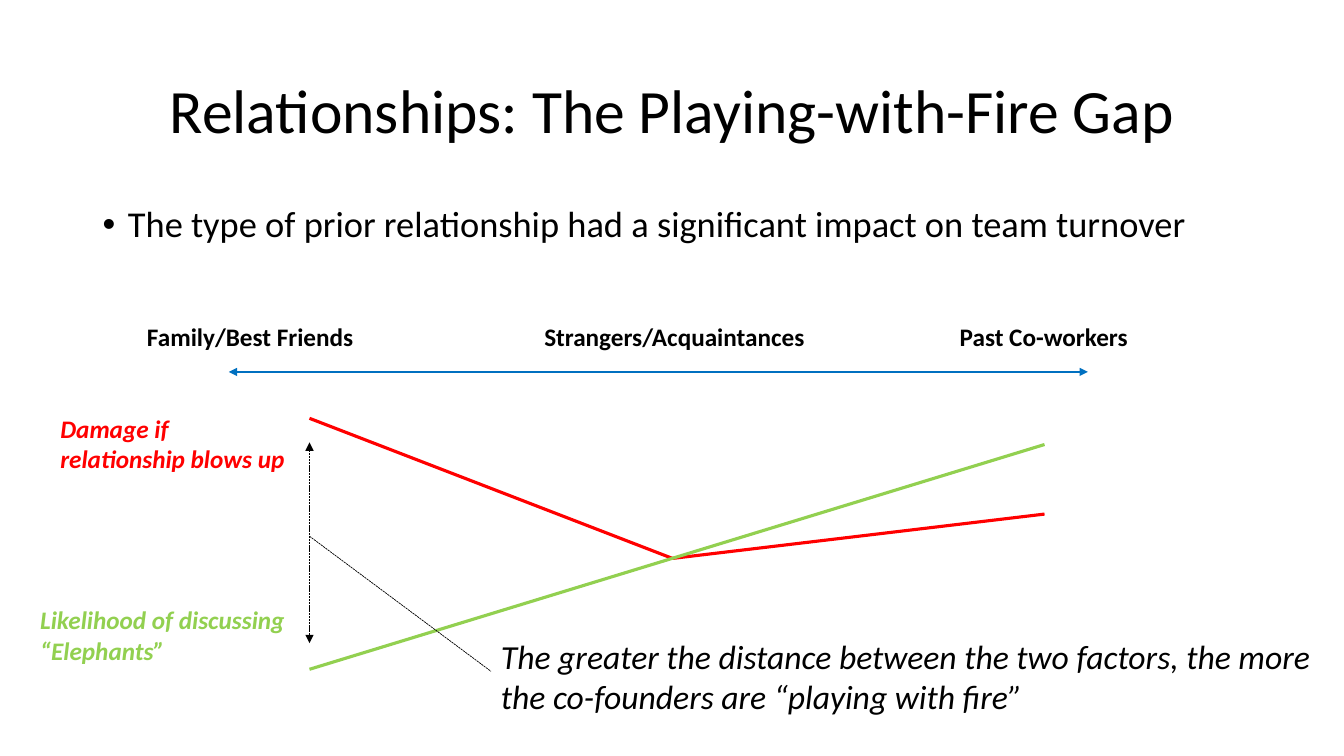
"""Build the slide on relationships and the playing-with-fire gap."""
from dataclasses import dataclass

from pptx import Presentation
from pptx import util as u
from pptx.dml import color
from pptx.enum import dml, text
from pptx.oxml import ns, xmlchemy


@dataclass(frozen=True)
class Theme:
    font: str = "Calibri"
    ink: str = "000000"
    axis: str = "0070C0"
    damage: str = "FF0000"
    discussion: str = "92D050"
    title: float = 44
    body: float = 26
    note: float = 24
    label: float = 18
    axis_line: float = 1.5
    curve_line: float = 2.25
    gap_line: float = 0.5


T = Theme()


@dataclass(frozen=True)
class Label:
    text: str
    left: float
    top: float
    width: float
    height: float
    color: str = T.ink
    size: float = T.label
    bold: bool = True
    italic: bool = False
    wrap: bool = False


@dataclass(frozen=True)
class Line:
    start: tuple[float, float]
    end: tuple[float, float]
    color: str
    width: float
    arrows: bool = False
    dashed: bool = False


GAP_X, CROSS, END_X = 3.07, (6.67, 5.54), 10.36
AXIS_Y = 3.69

BULLET = Label("The type of prior relationship had a significant impact on team turnover",
               0.92, 2, 11.88, 0.7, size=T.body, bold=False, wrap=True)

LABELS = [
    Label("Family/Best Friends", 1.36, 3.14, 2.26, 0.4),
    Label("Strangers/Acquaintances", 5.3, 3.14, 2.8, 0.4),
    Label("Past Co-workers", 9.42, 3.14, 1.88, 0.4),
    Label("Damage if \vrelationship blows up", 0.5, 4.05, 2.45, 0.71,
          T.damage, italic=True),
    Label("Likelihood of discussing\n“Elephants”", 0.3, 5.95, 2.65, 0.71,
          T.discussion, italic=True),
    Label("The greater the distance between the two factors, the more\v"
          "the co-founders are “playing with fire”", 4.87, 6.26, 8.37, 0.91,
          size=T.note, bold=False, italic=True),
]

LINES = [
    Line((2.27, AXIS_Y), (10.79, AXIS_Y), T.axis, T.axis_line, arrows=True),
    Line((GAP_X, 4.15), CROSS, T.damage, T.curve_line),
    Line(CROSS, (END_X, 5.1), T.damage, T.curve_line),
    Line((GAP_X, 6.64), (END_X, 4.41), T.discussion, T.curve_line),
    Line((GAP_X, 4.39), (GAP_X, 6.38), T.ink, T.gap_line, arrows=True, dashed=True),
    Line((GAP_X, 5.32), (4.87, 6.66), T.ink, T.gap_line, dashed=True),
]


def add_child(parent: xmlchemy.BaseOxmlElement, tag: str, **attrs: str) -> None:
    """Append a drawing element with the given attributes."""
    child = xmlchemy.OxmlElement(tag)
    for name, value in attrs.items():
        child.set(name, value)
    parent.append(child)


def place(sp, left: float, top: float, width: float, height: float) -> None:
    """Set a shape's position and size in inches."""
    sp.left, sp.top = u.Inches(left), u.Inches(top)
    sp.width, sp.height = u.Inches(width), u.Inches(height)


def format_runs(tf, size: float, hue: str, bold: bool = False, italic: bool = False) -> None:
    """Format every run of a text frame."""
    for p in tf.paragraphs:
        for r in p.runs:
            r.font.name, r.font.size = T.font, u.Pt(size)
            r.font.bold, r.font.italic = bold, italic
            r.font.color.rgb = color.RGBColor.from_string(hue)


def add_title(s, title: str) -> None:
    """Fill and place the title placeholder."""
    sp = s.shapes.title
    place(sp, 0.92, 0.4, 11.5, 1.45)
    tf = sp.text_frame
    tf.text = title
    tf.auto_size = text.MSO_AUTO_SIZE.NONE
    tf.vertical_anchor = text.MSO_ANCHOR.MIDDLE
    p = tf.paragraphs[0]
    p.alignment, p.line_spacing = text.PP_ALIGN.CENTER, 0.9
    format_runs(tf, T.title, T.ink)


def add_label(s, label: Label):
    """Draw a text box and return its text frame."""
    sp = s.shapes.add_textbox(0, 0, 0, 0)
    place(sp, label.left, label.top, label.width, label.height)
    tf = sp.text_frame
    tf.text = label.text
    tf.word_wrap = label.wrap
    tf.auto_size = text.MSO_AUTO_SIZE.SHAPE_TO_FIT_TEXT
    format_runs(tf, label.size, label.color, label.bold, label.italic)
    return tf


def add_bullet(s, label: Label) -> None:
    """Draw a bulleted text box."""
    p = add_label(s, label).paragraphs[0]
    p.line_spacing, p.space_before = 0.9, u.Pt(10)
    pPr = p._p.get_or_add_pPr()
    pPr.set("marL", str(u.Inches(0.25)))
    pPr.set("indent", str(u.Inches(-0.25)))
    add_child(pPr, "a:buFont", typeface="Arial")
    add_child(pPr, "a:buChar", char="•")


def add_line(s, line: Line) -> None:
    """Draw a straight connector."""
    ends = [u.Inches(v) for v in (*line.start, *line.end)]
    sp = s.shapes.add_connector(1, *ends)
    sp.line.color.rgb = color.RGBColor.from_string(line.color)
    sp.line.width = u.Pt(line.width)
    if line.dashed:
        sp.line.dash_style = dml.MSO_LINE.SQUARE_DOT
    spPr = sp._element.spPr
    if line.arrows:
        for tag in ("a:headEnd", "a:tailEnd"):
            add_child(spPr.find(ns.qn("a:ln")), tag, type="triangle")
    add_child(spPr, "a:effectLst")


def main() -> None:
    """Build and save the presentation."""
    prs = Presentation()
    prs.slide_width, prs.slide_height = u.Inches(13.33), u.Inches(7.5)
    s = prs.slides.add_slide(prs.slide_layouts.get_by_name("Title Only"))
    add_title(s, "Relationships: The Playing-with-Fire Gap")
    add_bullet(s, BULLET)
    for line in LINES:
        add_line(s, line)
    for label in LABELS:
        add_label(s, label)
    prs.save("out.pptx")


if __name__ == "__main__":
    main()
